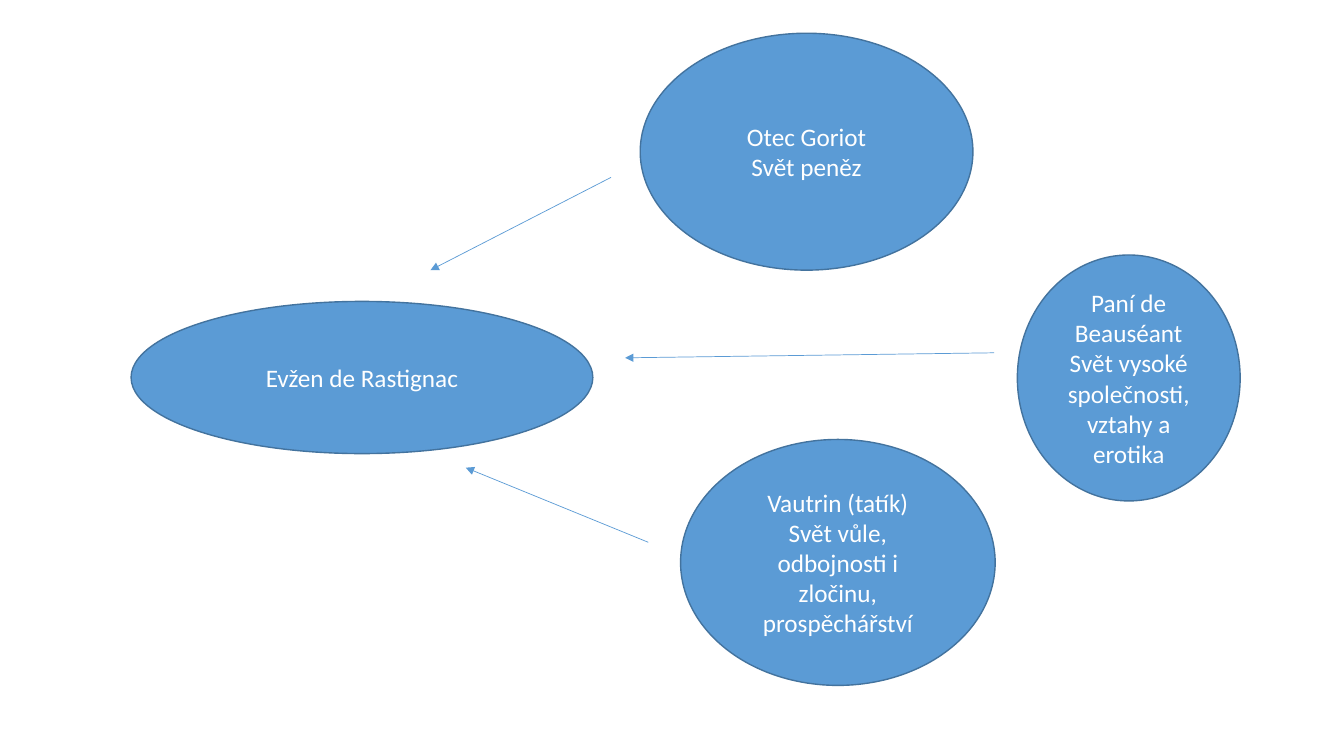
from lxml import etree
from pptx import Presentation
from pptx.dml.color import RGBColor
from pptx.enum.shapes import MSO_CONNECTOR, MSO_SHAPE
from pptx.enum.text import MSO_ANCHOR, PP_ALIGN
from pptx.oxml.ns import qn
from pptx.util import Emu, Pt

OVAL = MSO_SHAPE.OVAL
STRAIGHT = MSO_CONNECTOR.STRAIGHT
MIDDLE = MSO_ANCHOR.MIDDLE
CENTER = PP_ALIGN.CENTER

EMU_PER_PX = 9144
BLUE = "5B9BD5"
DARK_BLUE = "43739E"
WHITE = "FFFFFF"

CHARACTERS = [
    ((130, 299, 458, 151), ["Evžen de Rastignac"]),
    ((635, 33, 330, 235), ["Otec Goriot", "Svět peněz"]),
    ((675, 436, 312, 244),
     ["Vautrin (tatík)", "Svět vůle, odbojnosti i zločinu, prospěchářství"]),
    ((1009, 253, 221, 244),
     ["Paní de Beauséant", "Svět vysoké společnosti, vztahy a erotika"]),
]
INFLUENCES = [
    ((606, 176), (427, 268)),
    ((986, 350), (620, 355)),
    ((643, 538), (462, 464)),
]


def px(length):
    """Convert a length in px to EMU."""
    return Emu(length * EMU_PER_PX)


def color(value):
    """Convert a hex string to a colour."""
    return RGBColor.from_string(value)


def add_character(slide, box, lines):
    """Add an ellipse naming a character and the world they stand for."""
    shape = slide.shapes.add_shape(OVAL, *map(px, box))
    shape.shadow.inherit = False
    shape.fill.solid()
    shape.fill.fore_color.rgb = color(BLUE)
    shape.line.color.rgb = color(DARK_BLUE)
    shape.line.width = Pt(1)
    frame = shape.text_frame
    frame.word_wrap = True
    frame.vertical_anchor = MIDDLE
    frame.text = "\n".join(lines)
    for paragraph in frame.paragraphs:
        paragraph.alignment = CENTER
        paragraph.font.name = "Calibri"
        paragraph.font.size = Pt(18)
        paragraph.font.color.rgb = color(WHITE)


def add_influence(slide, start, end):
    """Add a thin arrow from one point to another."""
    connector = slide.shapes.add_connector(STRAIGHT, *map(px, start + end))
    connector.line.color.rgb = color(BLUE)
    connector.line.width = Pt(0.5)
    properties = connector._element.spPr
    etree.SubElement(properties.find(qn("a:ln")), qn("a:tailEnd"), type="triangle")
    etree.SubElement(properties, qn("a:effectLst"))


def add_character_map(presentation):
    """Add the slide that maps the characters around the hero."""
    slide = presentation.slides.add_slide(presentation.slide_layouts[6])
    for box, lines in CHARACTERS:
        add_character(slide, box, lines)
    for start, end in INFLUENCES:
        add_influence(slide, start, end)


def main():
    """Build and save the presentation."""
    presentation = Presentation()
    presentation.slide_width = px(1333)
    presentation.slide_height = px(750)
    add_character_map(presentation)
    presentation.save("out.pptx")


if __name__ == "__main__":
    main()
